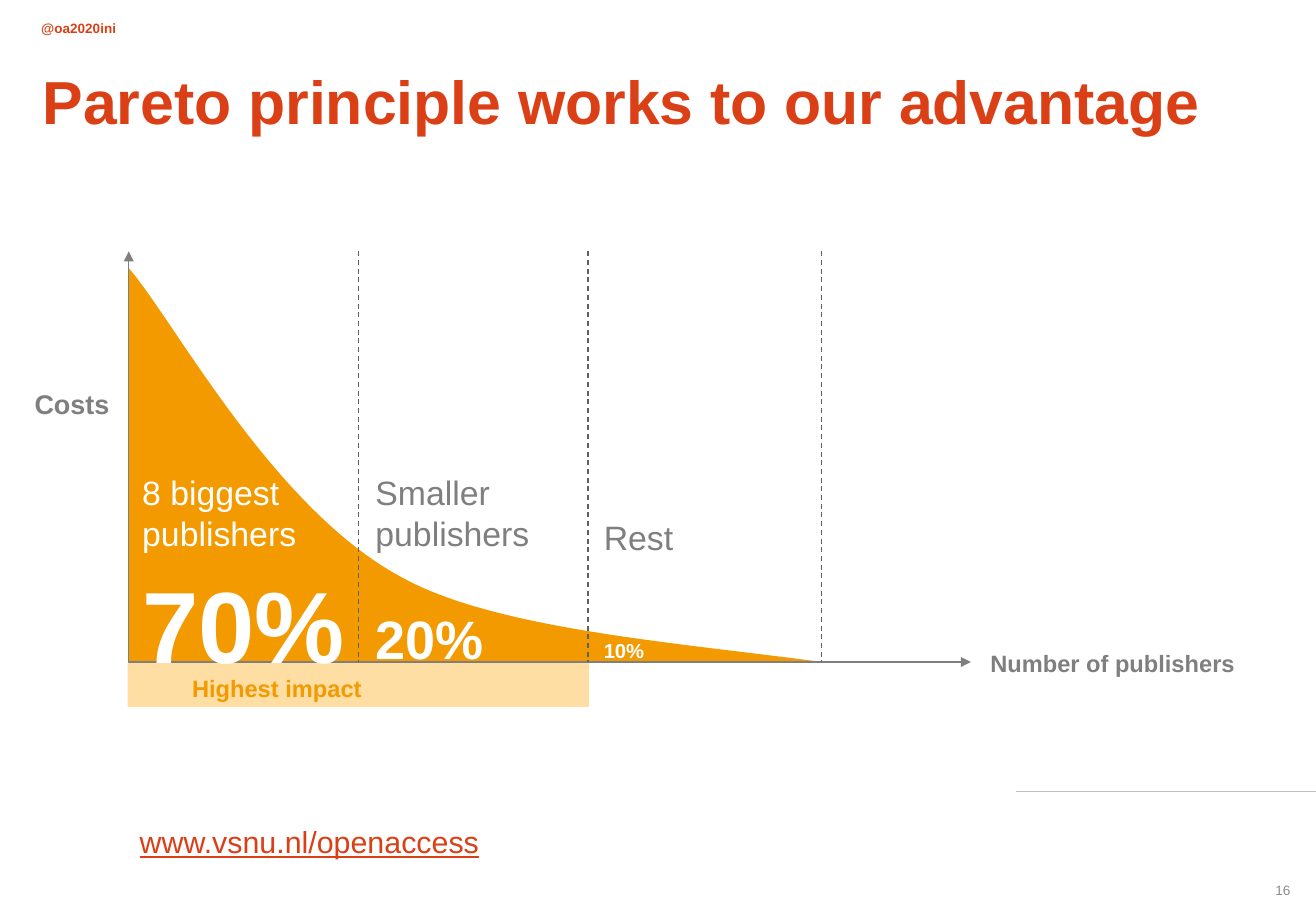
from pptx import Presentation
from pptx.dml.color import RGBColor as RGB
from pptx.enum.dml import MSO_LINE
from pptx.enum.shapes import MSO_CONNECTOR as CONN, MSO_SHAPE as SHAPE
from pptx.enum.text import PP_ALIGN as ALIGN
from pptx.oxml.ns import qn
from pptx.util import Pt
from lxml.etree import SubElement as Sub

COLORS = {
    "red": "DB3F16", "gold": "F29A00", "cream": "FFDEA3", "white": "FFFFFF",
    "gray": "7F7F7F", "dark": "606060", "pale": "C0C0C0", "page": "8C8C8C",
}


def tint(name):
    return RGB.from_string(COLORS[name])


def label(slide, text, x, y, w, size, color, bold=False, align=ALIGN.LEFT,
          under=False, pitch=None):
    box = slide.shapes.add_textbox(Pt(x), Pt(y), Pt(w), Pt(size * 1.15))
    frame = box.text_frame
    frame.word_wrap = True
    frame.margin_left = frame.margin_right = 0
    frame.margin_top = frame.margin_bottom = 0
    para = frame.paragraphs[0]
    para.alignment = align
    if pitch:
        para.line_spacing = Pt(pitch)
    run = para.add_run()
    run.text = text
    font = run.font
    font.name, font.size, font.bold = "Arial", Pt(size), bold
    font.color.rgb = tint(color)
    if under:
        font.underline = True


def paint(shape, color):
    shape.shadow.inherit = False
    shape.fill.solid()
    shape.fill.fore_color.rgb = tint(color)
    shape.line.fill.background()


def rule(slide, x1, y1, x2, y2, color, width, dash=None):
    line = slide.shapes.add_connector(CONN.STRAIGHT, Pt(x1), Pt(y1), Pt(x2), Pt(y2))
    line.line.color.rgb = tint(color)
    line.line.width = Pt(width)
    if dash:
        line.line.dash_style = dash
    Sub(line._element.spPr, qn("a:effectLst"))
    return line


def outline(slide, points, close):
    # Hundredths of a point keep the curve smooth
    grid = [(round(x * 100), round(y * 100)) for x, y in points]
    path = slide.shapes.build_freeform(*grid[0], scale=Pt(1) / 100)
    path.add_line_segments(grid[1:], close=close)
    shape = path.convert_to_shape()
    shape.shadow.inherit = False
    return shape


def bezier(a, b, c, d, steps=40):
    for i in range(1, steps + 1):
        t = i / steps
        u = 1 - t
        yield tuple(u**3 * p + 3 * u * u * t * q + 3 * u * t * t * r + t**3 * s
                    for p, q, r, s in zip(a, b, c, d))


def header(slide, x, y, w):
    label(slide, "@oa2020ini", x, y, 60, 8, "red", bold=True)
    label(slide, "Pareto principle works to our advantage",
          x + 0.9, y + 25.6, w, 36, "red", bold=True)


def chart(slide, x, y, w, h):
    base = y + h

    # Band under the first two groups
    band = slide.shapes.add_shape(SHAPE.RECTANGLE, Pt(x - 0.7), Pt(base),
                                  Pt(273.6), Pt(26.6))
    paint(band, "cream")

    # Cost curve
    start, knee, tail = (x, y + 10), (x + 161.3, y + 193), (x + 410.4, base)
    curve = [start]
    curve += bezier(start, (x + 26.6, y + 40.4), (x + 85, y + 152), knee)
    curve += bezier(knee, (x + 216.7, y + 224), (x + 324, y + 231.8), tail)
    paint(outline(slide, curve + [(x, base)], True), "gold")

    # Axes
    axes = outline(slide, [(x, y), (x, base), (x + w, base)], False)
    axes.fill.background()
    axes.line.color.rgb = tint("gray")
    axes.line.width = Pt(0.75)
    for end in ("a:headEnd", "a:tailEnd"):
        Sub(axes.line._get_or_add_ln(), qn(end), type="triangle")

    # Group borders
    edges = [rule(slide, x + dx, y, x + dx, base, "dark", 0.75, MSO_LINE.DASH)
             for dx in (136.1, 272.2, 410.4)]
    edges[0].end_connect(band, 0)

    # Groups: name, left, name top, name colour, share, share size, share top
    groups = [
        ("8 biggest publishers", 8, 130.4, "white", "70%", 60, 184.3),
        ("Smaller publishers", 146.2, 130.4, "gray", "20%", 32, 210.2),
        ("Rest", 281.5, 157, "gray", "10%", 12, 229.5),
    ]
    for name, dx, top, color, share, size, low in groups:
        label(slide, name, x + dx, y + top, 127.4, 20, color, pitch=24.3)
        label(slide, share, x + dx, y + low, 127.4, size, "white", bold=True)

    # Axis and band labels
    label(slide, "Highest impact", x + 37.5, base + 6.8, 198, 14, "gold", bold=True)
    label(slide, "Number of publishers", x + w + 11.5, base - 8, 187, 14,
          "gray", bold=True)
    label(slide, "Costs", x - 84.3, y + 80.7, 72.8, 16, "gray", bold=True,
          align=ALIGN.RIGHT)


def footer(slide, x, y, w):
    rule(slide, x + w - 177.8, y, x + w, y, "pale", 0.5)
    label(slide, "www.vsnu.nl/openaccess", x + 82.8, y + 18.6, 270, 18, "red",
          under=True)
    label(slide, "16", x + w - 76.4, y + 53.7, 61.2, 8, "page", align=ALIGN.RIGHT)


def main():
    deck = Presentation()
    deck.slide_width, deck.slide_height = Pt(779.8), Pt(540)
    slide = deck.slides.add_slide(deck.slide_layouts[6])
    header(slide, 24.4, 12, 720)
    chart(slide, 76.3, 149, 499, 243.4)
    footer(slide, 0, 469.4, 779.8)
    deck.save("out.pptx")


if __name__ == "__main__":
    main()
